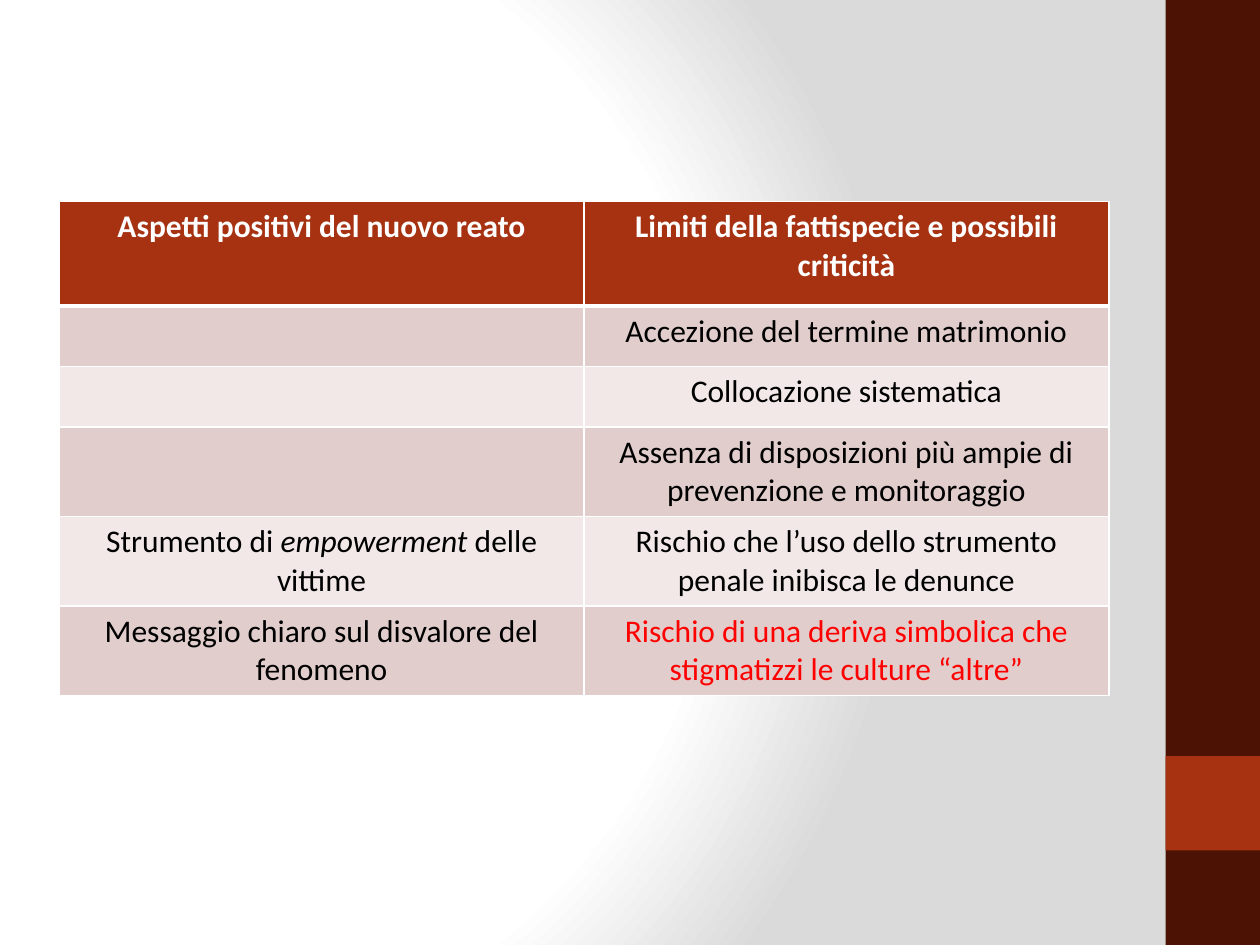
"""Build a slide with a table of the merits and limits of a new offence."""
import pptx
import pptx.dml.color
import pptx.enum.shapes
import pptx.enum.text
import pptx.oxml
import pptx.util
from pptx.util import Inches

RGB = pptx.dml.color.RGBColor
WHITE = RGB(0xFF, 0xFF, 0xFF)
BLACK = RGB(0x00, 0x00, 0x00)
RED = RGB(0xFF, 0x00, 0x00)
GREY = RGB(0xDA, 0xDA, 0xDA)
BROWN = RGB(0x4C, 0x13, 0x04)
RUST = RGB(0xA6, 0x32, 0x12)
ROSE = RGB(0xE1, 0xCE, 0xCC)
PALE = RGB(0xF1, 0xE8, 0xE7)

ITALIC = "empowerment"
ROWS = [
    ("Aspetti positivi del nuovo reato", "Limiti della fattispecie e possibili criticità"),
    ("", "Accezione del termine matrimonio"),
    ("", "Collocazione sistematica"),
    ("", "Assenza di disposizioni più ampie di prevenzione e monitoraggio"),
    ("Strumento di empowerment delle vittime",
     "Rischio che l’uso dello strumento penale inibisca le denunce"),
    ("Messaggio chiaro sul disvalore del fenomeno",
     "Rischio di una deriva simbolica che stigmatizzi le culture “altre”"),
]
BARS = [(0, 7.5, BROWN), (6, 0.75, RUST)]
STOPS = [(0, WHITE), (75, WHITE), (100, GREY)]
NS = ('xmlns:a="http://schemas.openxmlformats.org/drawingml/2006/main" '
      'xmlns:p="http://schemas.openxmlformats.org/presentationml/2006/main"')


def paint_back(slide):
    stops = "".join(f'<a:gs pos="{pos * 1000}"><a:srgbClr val="{color}"/></a:gs>'
                    for pos, color in STOPS)
    back = pptx.oxml.parse_xml(
        f'<p:bg {NS}><p:bgPr><a:gradFill rotWithShape="1"><a:gsLst>{stops}</a:gsLst>'
        '<a:path path="circle"><a:fillToRect l="20000" t="50000" r="100000" b="50000"/>'
        '</a:path></a:gradFill><a:effectLst/></p:bgPr></p:bg>')
    slide._element.cSld.insert(0, back)


def add_bar(slide, top, height, color):
    bar = slide.shapes.add_shape(pptx.enum.shapes.MSO_SHAPE.RECTANGLE,
                                 Inches(9.25), Inches(top), Inches(0.75), Inches(height))
    bar.shadow.inherit = False
    bar.fill.solid()
    bar.fill.fore_color.rgb = color
    bar.line.fill.background()


def add_edges(cell, head, below):
    props = cell._tc.get_or_add_tcPr()
    widths = {"L": 1, "R": 1, "T": 3 if below else 1, "B": 3 if head else 1}
    for side, width in widths.items():
        props.append(pptx.oxml.parse_xml(
            f'<a:ln{side} {NS} w="{pptx.util.Pt(width)}"><a:solidFill>'
            f'<a:srgbClr val="{WHITE}"/></a:solidFill></a:ln{side}>'))


def fill_cell(cell, text, row, color):
    head = row == 0
    add_edges(cell, head, row == 1)
    cell.fill.solid()
    cell.fill.fore_color.rgb = RUST if head else ROSE if row % 2 else PALE
    para = cell.text_frame.paragraphs[0]
    para.alignment = pptx.enum.text.PP_ALIGN.CENTER
    font = para.font
    font.name, font.size, font.bold = "Calibri", pptx.util.Pt(18), head
    font.color.rgb = color
    start, word, rest = text.partition(ITALIC)
    for part in filter(None, (start, word, rest)):
        run = para.add_run()
        run.text = part
        if part == ITALIC:
            run.font.italic = True


def add_grid(slide):
    grid = slide.shapes.add_table(len(ROWS), 2, Inches(0.47), Inches(1.6),
                                  Inches(8.33), Inches(3.23)).table
    for row, texts in enumerate(ROWS):
        grid.rows[row].height = Inches(0.48 if row else 0.83)
        for col, text in enumerate(texts):
            last = row == len(ROWS) - 1 and col == 1
            color = RED if last else BLACK if row else WHITE
            fill_cell(grid.cell(row, col), text, row, color)


def main():
    deck = pptx.Presentation()
    deck.slide_width, deck.slide_height = Inches(10), Inches(7.5)
    slide = deck.slides.add_slide(deck.slide_layouts[6])
    paint_back(slide)
    for bar in BARS:
        add_bar(slide, *bar)
    add_grid(slide)
    deck.save("out.pptx")


if __name__ == "__main__":
    main()
